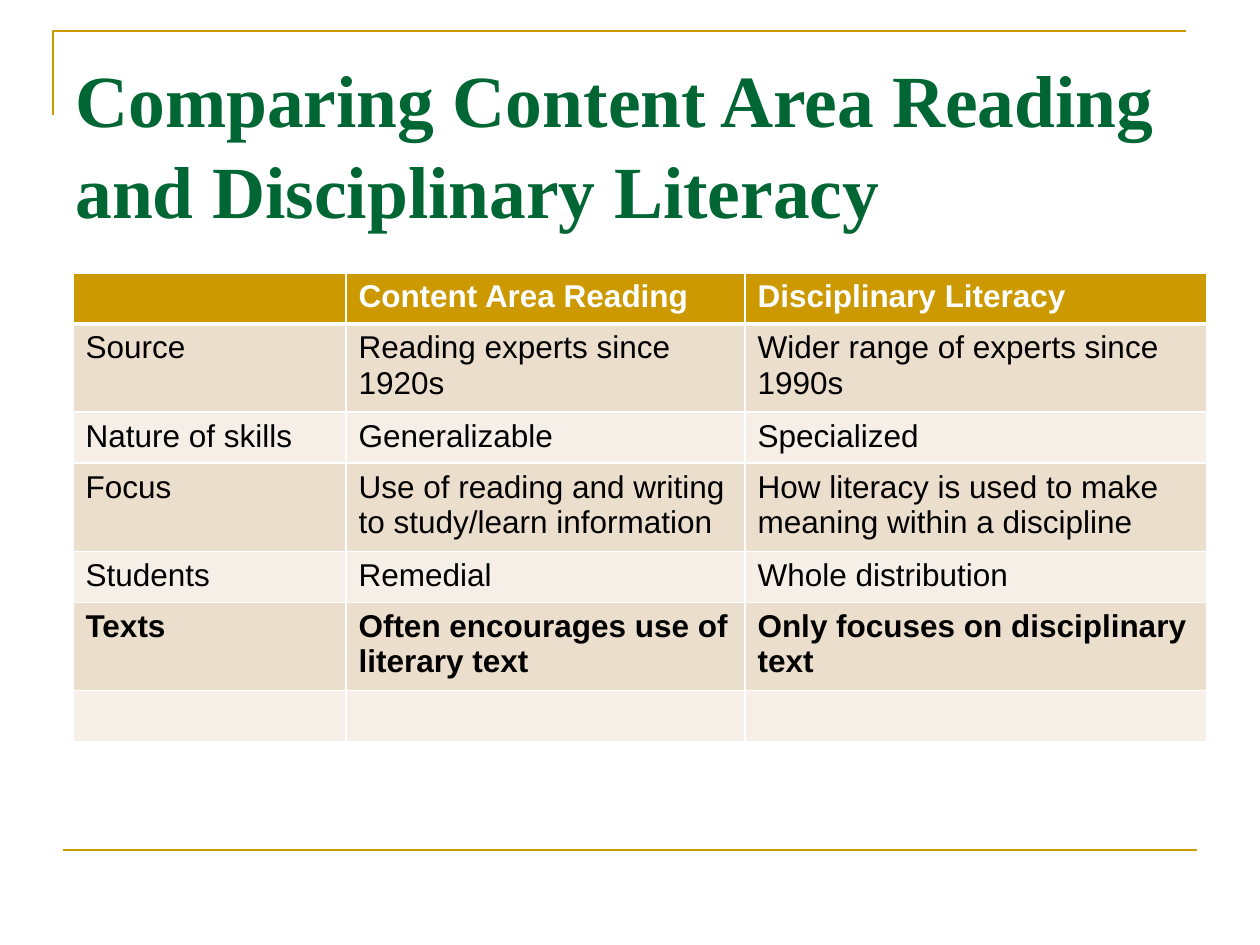
from lxml.etree import SubElement
from pptx import Presentation
from pptx.dml.color import RGBColor
from pptx.enum.shapes import MSO_CONNECTOR
from pptx.enum.text import MSO_ANCHOR
from pptx.oxml.ns import qn
from pptx.util import Emu, Pt

SCALE = 914400 / 126
GOLD, GREEN, WHITE, BLACK = "CC9900", "006633", "FFFFFF", "000000"
BANDS = ("ECDECC", "F6EFE7")
COLUMN_WIDTHS = (273, 399, 462)
SINGLE_ROW, DOUBLE_ROW = 51, 83
COMPARISON = [
    ("", "Content Area Reading", "Disciplinary Literacy"),
    ("Source", "Reading experts since 1920s", "Wider range of experts since 1990s"),
    ("Nature of skills", "Generalizable", "Specialized"),
    ("Focus", "Use of reading and writing to study/learn information",
     "How literacy is used to make meaning within a discipline"),
    ("Students", "Remedial", "Whole distribution"),
    ("Texts", "Often encourages use of literary text", "Only focuses on disciplinary text"),
    ("", "", ""),
]
BOLD_ROWS = (0, 5)
DOUBLE_ROWS = (1, 3, 5)


def px(length):
    return Emu(round(length * SCALE))


def color(value):
    return RGBColor.from_string(value)


class SlideBuilder:
    title_font = "Times New Roman"
    body_font = "Arial"

    def __init__(self, slide):
        self.slide = slide
        self.shapes = slide.shapes

    def style_line(self, shape):
        shape.line.color.rgb = color(GOLD)
        shape.line.width = Pt(1.5)

    def corner(self, points):
        builder = self.shapes.build_freeform(*points[0], scale=SCALE)
        builder.add_line_segments(points[1:], close=False)
        shape = builder.convert_to_shape()
        shape.shadow.inherit = False
        shape.fill.background()
        self.style_line(shape)

    def rule(self, left, right, top):
        connector = self.shapes.add_connector(
            MSO_CONNECTOR.STRAIGHT, px(left), px(top), px(right), px(top))
        self.style_line(connector)
        SubElement(connector._element.spPr, qn("a:effectLst"))

    def set_text(self, paragraph, text, font, size, hue, bold):
        paragraph.text = text
        paragraph.font.name = font
        paragraph.font.size = Pt(size)
        paragraph.font.color.rgb = color(hue)
        paragraph.font.bold = bold

    def title(self, text, left, top, width, height):
        frame = self.shapes.add_textbox(px(left), px(top), px(width), px(height)).text_frame
        frame.word_wrap = True
        frame.vertical_anchor = MSO_ANCHOR.TOP
        frame.margin_top = px(12)
        paragraph = frame.paragraphs[0]
        paragraph.line_spacing = 1.04
        self.set_text(paragraph, text, self.title_font, 42, GREEN, True)

    def borders(self, cell, top, bottom):
        properties = cell._tc.get_or_add_tcPr()
        for side, width in (("L", 1), ("R", 1), ("T", top), ("B", bottom)):
            line = SubElement(properties, qn(f"a:ln{side}"), w=str(Pt(width)))
            fill = SubElement(line, qn("a:solidFill"))
            SubElement(fill, qn("a:srgbClr"), val=WHITE)

    def table(self, rows, left, top):
        heights = [DOUBLE_ROW if i in DOUBLE_ROWS else SINGLE_ROW for i in range(len(rows))]
        table = self.shapes.add_table(
            len(rows), len(COLUMN_WIDTHS), px(left), px(top),
            px(sum(COLUMN_WIDTHS)), px(sum(heights))).table
        for column, width in zip(table.columns, COLUMN_WIDTHS):
            column.width = px(width)
        for index, (row, height, texts) in enumerate(zip(table.rows, heights, rows)):
            row.height = px(height)
            header = index == 0
            for cell, text in zip(row.cells, texts):
                self.borders(cell, 3 if index == 1 else 1, 3 if header else 1)
                cell.fill.solid()
                cell.fill.fore_color.rgb = color(GOLD if header else BANDS[(index - 1) % 2])
                self.set_text(cell.text_frame.paragraphs[0], text, self.body_font, 18,
                              WHITE if header else BLACK, index in BOLD_ROWS)


def main():
    presentation = Presentation()
    presentation.slide_width, presentation.slide_height = px(1260), px(945)
    builder = SlideBuilder(presentation.slides.add_slide(presentation.slide_layouts[6]))
    builder.corner([(53, 115), (53, 31), (1186, 31)])
    builder.rule(63, 1197, 850)
    builder.title("Comparing Content Area Reading and Disciplinary Literacy", 63, 38, 1134, 158)
    builder.table(COMPARISON, 73, 273)
    presentation.save("out.pptx")


if __name__ == "__main__":
    main()
